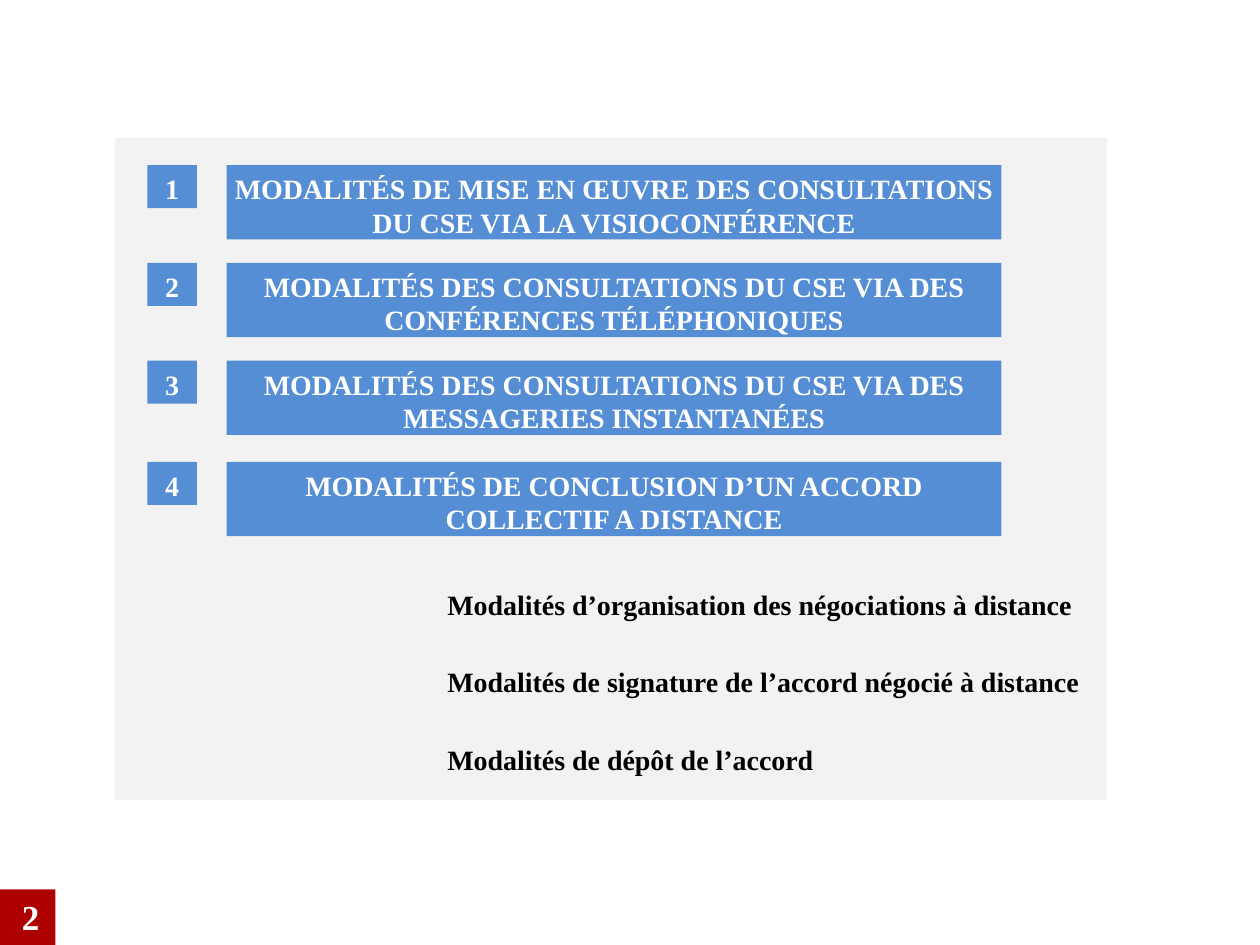
from pptx import Presentation
from pptx.dml.color import RGBColor
from pptx.enum.shapes import MSO_SHAPE as SHAPE
from pptx.enum.text import MSO_ANCHOR as ANCHOR, MSO_AUTO_SIZE as FIT, PP_ALIGN as ALIGN
from pptx.util import Cm, Pt

RED = RGBColor(0xAE, 0x00, 0x00)
BLUE = RGBColor(0x55, 0x8E, 0xD5)
GREY = RGBColor(0xF2, 0xF2, 0xF2)
WHITE = RGBColor(0xFF, 0xFF, 0xFF)
BLACK = RGBColor(0x00, 0x00, 0x00)
FONT = "Times New Roman"

TOPICS = [
    (3.33, "MODALITÉS DE MISE EN ŒUVRE DES CONSULTATIONS DU CSE VIA LA VISIOCONFÉRENCE"),
    (5.3, "MODALITÉS DES CONSULTATIONS DU CSE VIA DES CONFÉRENCES TÉLÉPHONIQUES"),
    (7.27, "MODALITÉS DES CONSULTATIONS DU CSE VIA DES MESSAGERIES INSTANTANÉES"),
    (9.31, "MODALITÉS DE CONCLUSION D’UN ACCORD COLLECTIF A DISTANCE"),
]
SUBTOPICS = [
    (13.21, ALIGN.JUSTIFY, "Modalités d’organisation des négociations à distance"),
    (13.41, ALIGN.LEFT, "Modalités de signature de l’accord négocié à distance"),
    (11.86, ALIGN.LEFT, "Modalités de dépôt de l’accord"),
]
SUBTOPIC_TOP, SUBTOPIC_PITCH = 11.71, 1.56


def write(shape, text, color, align=ALIGN.CENTER, size=16, wrap=True):
    tf = shape.text_frame
    margins = {f"margin_{side}": Cm(0.13) for side in ("left", "top", "right", "bottom")}
    frame = {"word_wrap": wrap, "auto_size": FIT.NONE, "vertical_anchor": ANCHOR.TOP}
    for name, value in {**margins, **frame}.items():
        setattr(tf, name, value)
    p = tf.paragraphs[0]
    p.alignment = align
    r = p.add_run()
    r.text = text
    for name, value in {"name": FONT, "size": Pt(size), "bold": True}.items():
        setattr(r.font, name, value)
    r.font.color.rgb = color


def add_box(s, left, top, width, height, fill):
    box = s.shapes.add_shape(SHAPE.RECTANGLE, Cm(left), Cm(top), Cm(width), Cm(height))
    box.shadow.inherit = False
    box.fill.solid()
    box.fill.fore_color.rgb = fill
    box.line.fill.background()
    return box


def add_label(s, left, top, width, height, text, color, **text_format):
    label = s.shapes.add_textbox(Cm(left), Cm(top), Cm(width), Cm(height))
    write(label, text, color, **text_format)


def add_topic(s, number, top, text):
    write(add_box(s, 4.57, top, 15.62, 1.5, BLUE), text, WHITE)
    write(add_box(s, 2.97, top, 1, 0.87, BLUE), str(number), WHITE)


def main():
    prs = Presentation()
    prs.slide_width, prs.slide_height = Cm(25.4), Cm(19.05)
    s = prs.slides.add_slide(prs.slide_layouts[6])

    add_box(s, 0, 17.93, 1.12, 1.12, RED)
    add_label(s, 0.3, 17.93, 0.64, 1.04, "2", WHITE, size=20, wrap=False)

    add_box(s, 2.31, 2.78, 20, 13.34, GREY)
    for number, (top, text) in enumerate(TOPICS, start=1):
        add_topic(s, number, top, text)
    for i, (width, align, text) in enumerate(SUBTOPICS):
        top = SUBTOPIC_TOP + i * SUBTOPIC_PITCH
        add_label(s, 8.89, top, width, 0.87, text, BLACK, align=align)

    prs.save("out.pptx")


if __name__ == "__main__":
    main()
